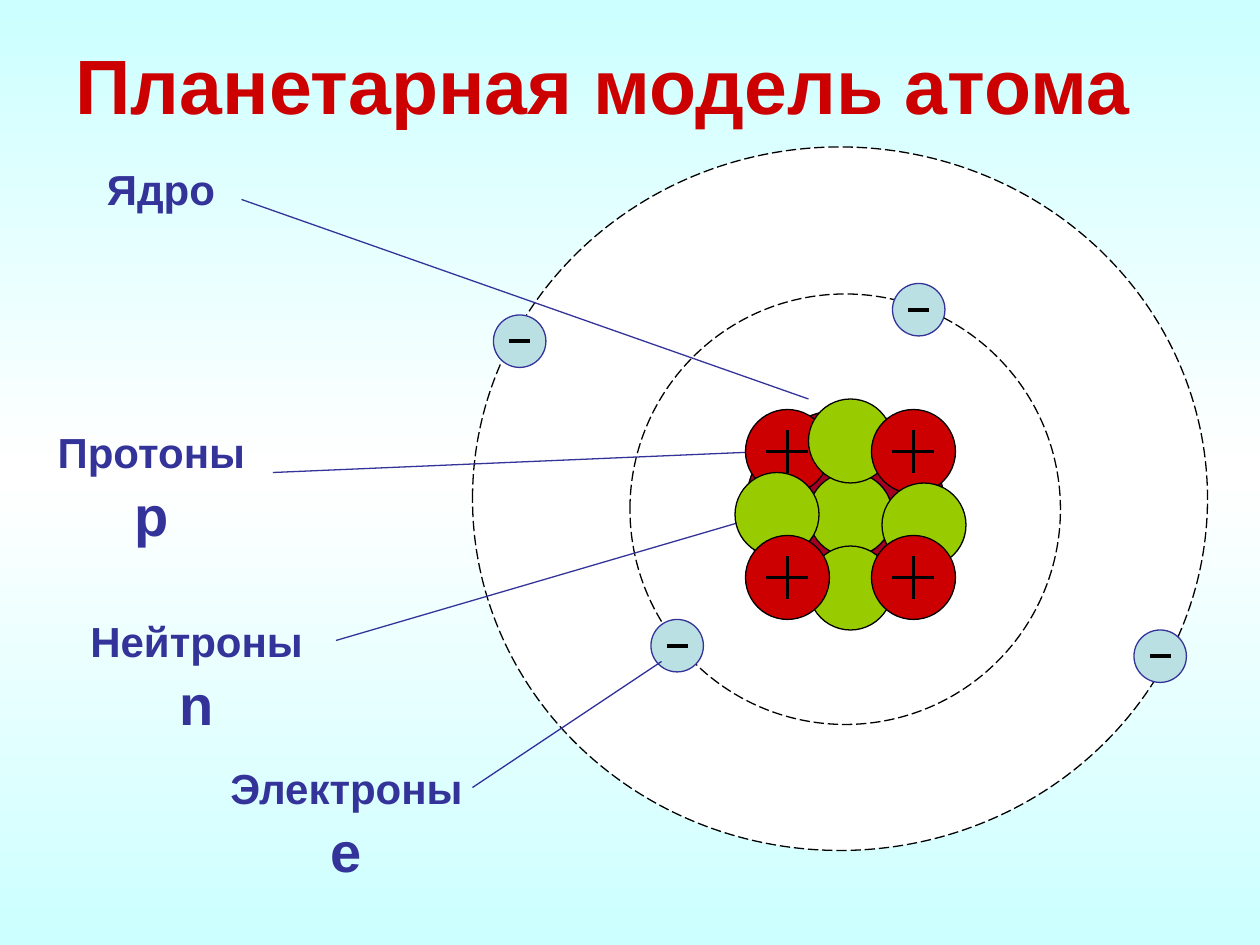
from copy import deepcopy
from dataclasses import dataclass

from pptx import Presentation
from pptx.dml.color import RGBColor
from pptx.enum.dml import MSO_LINE
from pptx.enum.shapes import MSO_CONNECTOR, MSO_SHAPE
from pptx.enum.text import MSO_ANCHOR, MSO_AUTO_SIZE, PP_ALIGN
from pptx.oxml.ns import qn
from pptx.oxml.xmlchemy import OxmlElement
from pptx.util import Inches, Pt

COLS, ROWS = 120, 90
BLACK, RED, GREEN, NAVY, PALE = "000000", "CC0000", "99CC00", "333399", "BBE0E3"
PROTON, NEUTRON, ELECTRON = "proton", "neutron", "electron"


@dataclass
class Particle:
    """A particle, with its top left corner in grid cells."""
    kind: str
    col: float
    row: float


@dataclass
class Label:
    """A particle name and symbol; pull is the name's right indent in inches."""
    name: str
    symbol: str
    box: tuple[float, float, float, float]
    pull: float = 0
    align: PP_ALIGN = PP_ALIGN.CENTER


STYLES = {PROTON: (8, RED, BLACK), NEUTRON: (8, GREEN, BLACK), ELECTRON: (5, PALE, NAVY)}
ORBITS = [(45, 14, 70, 67), (60, 28, 41, 41)]
ELECTRONS = [Particle(ELECTRON, c, r) for c, r in [(85, 27), (108, 60), (62, 59), (47, 30)]]
NUCLEONS = [
    Particle(PROTON, 71, 39), Particle(NEUTRON, 77, 45), Particle(NEUTRON, 77, 38),
    Particle(NEUTRON, 70, 45), Particle(NEUTRON, 77, 52), Particle(PROTON, 83, 39),
    Particle(NEUTRON, 84, 46), Particle(PROTON, 83, 51), Particle(PROTON, 71, 51),
]
LABELS = [
    Label("Электроны", "е", (20, 72, 26, 12.4)),
    Label("Протоны", "р", (4, 40, 23, 12.4), pull=0.18),
    Label("Нейтроны", "n", (7, 58, 28, 12.4), pull=0.38),
    Label("Ядро", "", (9, 15, 19, 6), align=PP_ALIGN.LEFT),
]
POINTERS = [(23, 19, 77, 38), (63, 63, 45, 75), (26, 45, 73, 43), (32, 61, 73, 49)]

prs = Presentation()
prs.slide_width, prs.slide_height = Inches(10), Inches(7.5)
s = prs.slides.add_slide(prs.slide_layouts[5])


def rgb(value: str) -> RGBColor:
    """Turn a hex string into a colour."""
    return RGBColor.from_string(value)


def grid(*cells: float) -> list[int]:
    """Turn alternating columns and rows into lengths."""
    units = prs.slide_width / COLS, prs.slide_height / ROWS
    return [round(cell * units[i % 2]) for i, cell in enumerate(cells)]


def write(p, text: str, *, size: float, color: str, align=PP_ALIGN.LEFT,
          before: float = 2, pull: float = 0) -> None:
    """Fill a paragraph with bold formatted text."""
    p.alignment, p.space_before = align, Pt(before)
    if pull:
        p._p.get_or_add_pPr().set("marR", str(Inches(pull)))
    r = p.add_run()
    r.text = text
    r.font.name, r.font.size, r.font.bold = "Arial", Pt(size), True
    r.font.color.rgb = rgb(color)


def line(x1: float, y1: float, x2: float, y2: float, color: str, width: float = 0.75) -> None:
    """Draw a straight line between two grid points."""
    sp = s.shapes.add_connector(MSO_CONNECTOR.STRAIGHT, *grid(x1, y1, x2, y2))
    sp.line.color.rgb, sp.line.width = rgb(color), Pt(width)
    sp._element.spPr.append(OxmlElement("a:effectLst"))


def ellipse(box: tuple, fill: str, outline: str = BLACK, dash=None) -> None:
    """Draw an outlined ellipse in a grid box."""
    sp = s.shapes.add_shape(MSO_SHAPE.OVAL, *grid(*box))
    sp.shadow.inherit = False
    sp.fill.solid()
    sp.fill.fore_color.rgb = rgb(fill)
    sp.line.color.rgb, sp.line.width = rgb(outline), Pt(0.75)
    if dash:
        sp.line.dash_style = dash


def particle(item: Particle) -> None:
    """Draw a particle with the sign of its charge."""
    size, fill, outline = STYLES[item.kind]
    ellipse((item.col, item.row, size, size), fill, outline)
    x, y = item.col + size / 2, item.row + size / 2
    arm = 2 if item.kind == PROTON else 1
    if item.kind != NEUTRON:
        line(x - arm, y, x + arm, y, BLACK, 2.25)
    if item.kind == PROTON:
        line(x, y - arm, x, y + arm, BLACK, 2.25)


def label(item: Label) -> None:
    """Draw a name with its symbol on the line below."""
    tf = s.shapes.add_textbox(*grid(*item.box)).text_frame
    tf.word_wrap = True
    write(tf.paragraphs[0], item.name, size=24, color=NAVY, align=item.align, pull=item.pull)
    if item.symbol:
        write(tf.add_paragraph(), item.symbol, size=32, color=NAVY, align=item.align)


def background(*colors: str) -> None:
    """Fill the slide with an evenly spaced vertical gradient."""
    fill = s.background.fill
    fill.gradient()
    fill.gradient_angle = 90
    stops = s.element.find(".//" + qn("a:gsLst"))
    stops.append(deepcopy(stops[0]))
    for i, (stop, color) in enumerate(zip(fill.gradient_stops, colors)):
        stop.position = i / (len(colors) - 1)
        stop.color.rgb = rgb(color)


def title(text: str) -> None:
    """Place and format the slide title."""
    sp = s.shapes.title
    sp.left, sp.top, sp.width, sp.height = grid(6, 3, 110, 10)
    tf = sp.text_frame
    tf.vertical_anchor, tf.auto_size = MSO_ANCHOR.TOP, MSO_AUTO_SIZE.NONE
    write(tf.paragraphs[0], text, size=44, color=RED, before=4)


def main() -> None:
    """Build the slide and save it."""
    background("CCFFFF", "FFFFFF", "CCFFFF")
    title("Планетарная модель атома")
    for box in ORBITS:
        ellipse(box, "FFFFFF", dash=MSO_LINE.LONG_DASH)
    for item in ELECTRONS:
        particle(item)
    for item in LABELS:
        label(item)
    for ends in POINTERS:
        line(*ends, NAVY)
    ellipse((71, 39, 19, 19), "A50021")
    for item in NUCLEONS:
        particle(item)
    prs.save("out.pptx")


if __name__ == "__main__":
    main()
